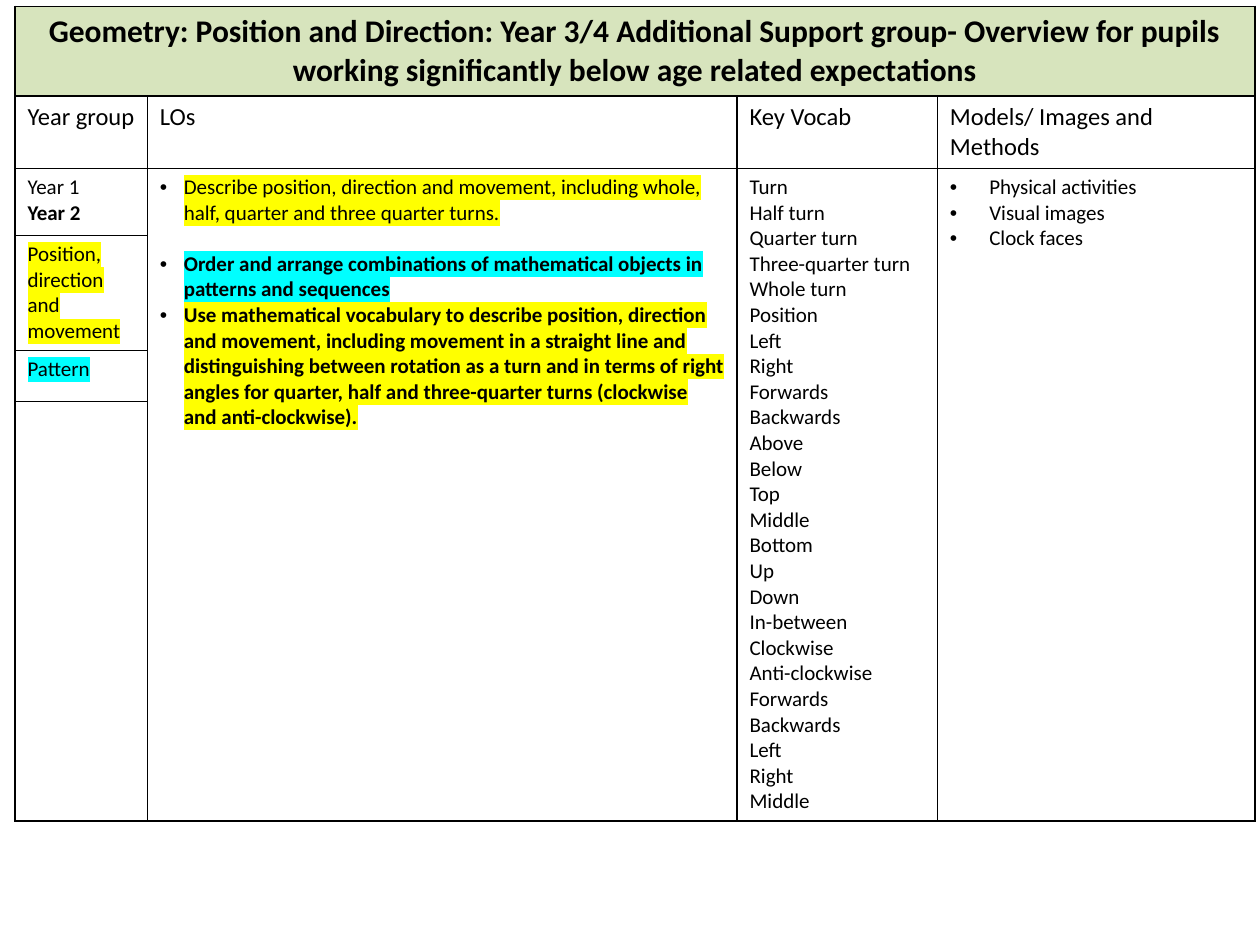
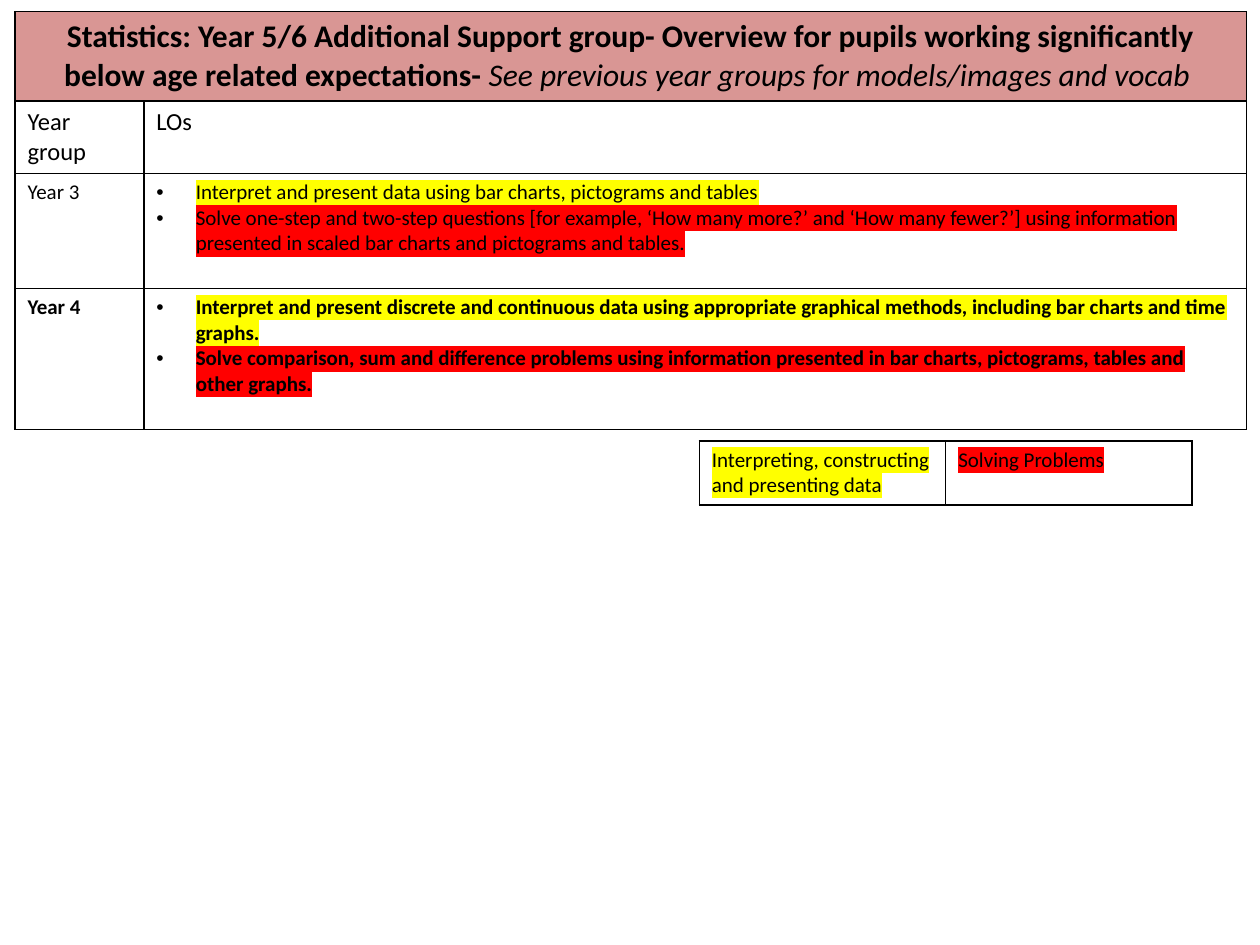
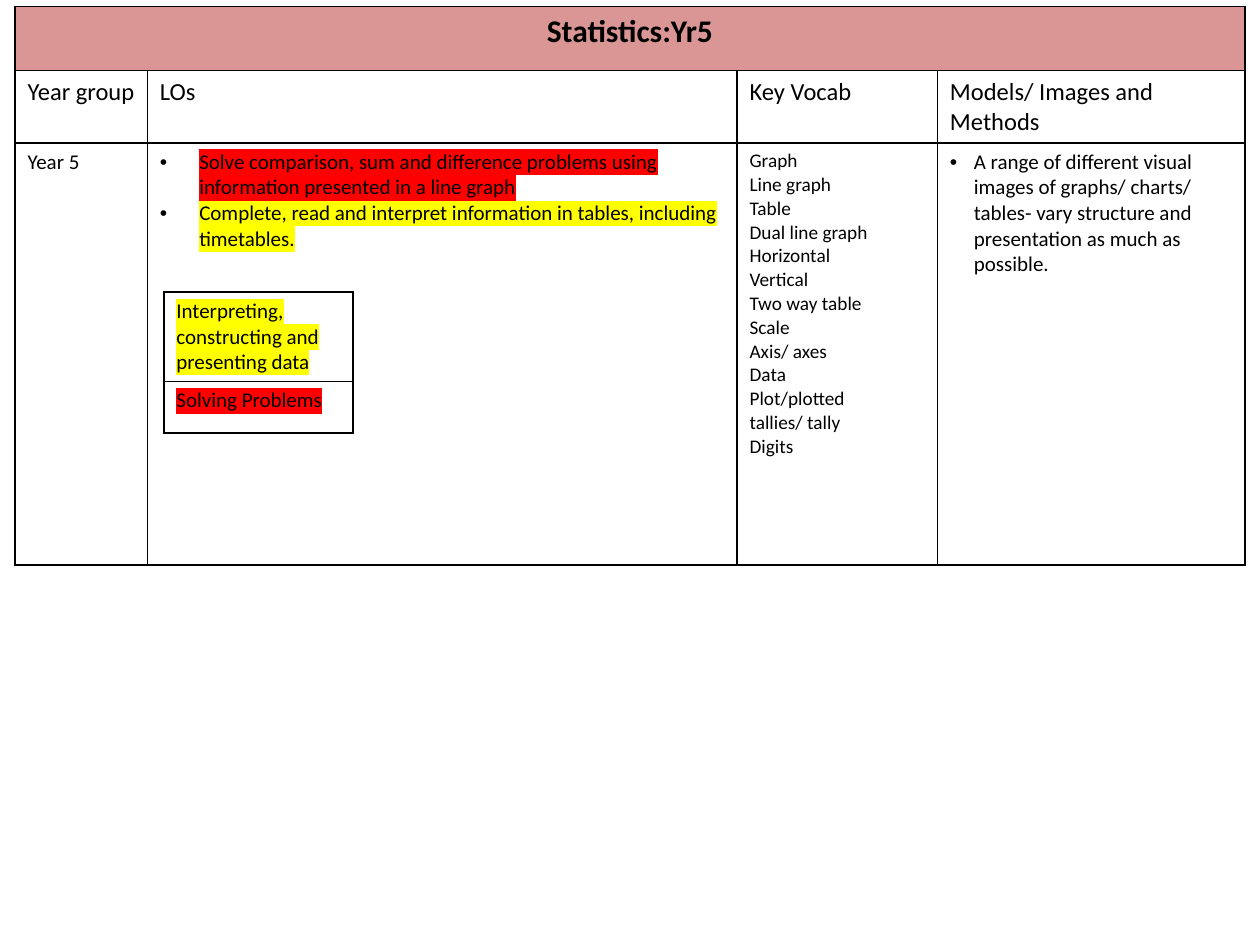
"""Builds three maths overview slides made of bordered curriculum tables."""
from dataclasses import dataclass

from lxml import etree
from pptx import Presentation
from pptx.dml.color import RGBColor
from pptx.enum import text as t
from pptx.oxml import ns
from pptx.util import Pt

FONT = "Calibri"
BLACK, YELLOW, CYAN, RED = "000000", "FFFF00", "00FFFF", "FF0000"
GEOMETRY, STATISTICS = "D7E4BD", "D99694"
LEFT, TOP = 8.6, 3.6
HEADING_HEIGHT = 41.4
NARROW, WIDE = 13.7, 22.5


@dataclass
class Run:
    """A stretch of text with one format."""
    text: str
    bold: bool = False
    italic: bool = False
    mark: str = ""


@dataclass
class Line:
    """A paragraph; a positive indent gives it a bullet."""
    runs: list[Run]
    size: float = 12
    indent: float = 0
    before: float = 0
    centred: bool = False


@dataclass
class Cell:
    """The paragraphs of one table cell and its fill."""
    lines: list[Line]
    fill: str = ""


@dataclass
class Grid:
    """A table; a row with a single cell spans every column."""
    left: float
    top: float
    widths: list[float]
    heights: list[float]
    rows: list[list[Cell]]


def colour(value: str) -> RGBColor:
    """Turn a hex string into a colour."""
    return RGBColor.from_string(value)


def add_child(parent, tag: str, **attributes: str):
    """Append a DrawingML element."""
    return etree.SubElement(parent, ns.qn(f"a:{tag}"), attributes)


def write(paragraph, text: str, *, size: float, bold: bool = False,
          italic: bool = False, mark: str = "") -> None:
    """Add a formatted run, highlighted when a mark colour is given."""
    run = paragraph.add_run()
    run.text = text
    font = run.font
    font.name, font.size, font.bold, font.italic = FONT, Pt(size), bold, italic
    font.color.rgb = colour(BLACK)
    if mark:
        properties = run._r.get_or_add_rPr()
        highlight = add_child(properties, "highlight")
        add_child(highlight, "srgbClr", val=mark)
        properties.find(ns.qn("a:latin")).addprevious(highlight)


def draw_line(paragraph, line: Line) -> None:
    """Write one paragraph with its bullet, spacing and alignment."""
    if line.indent:
        properties = paragraph._p.get_or_add_pPr()
        properties.set("marL", str(Pt(line.indent)))
        properties.set("indent", str(-Pt(line.indent)))
        add_child(properties, "buFont", typeface="Arial")
        add_child(properties, "buChar", char="•")
    if line.before:
        paragraph.space_before = Pt(line.before)
    paragraph.alignment = t.PP_ALIGN.CENTER if line.centred else t.PP_ALIGN.LEFT
    for run in line.runs:
        write(paragraph, run.text, size=line.size, bold=run.bold,
              italic=run.italic, mark=run.mark)


def draw_borders(cell) -> None:
    """Rule all four sides of a cell."""
    properties = cell._tc.get_or_add_tcPr()
    for side in "LRTB":
        rule = add_child(properties, f"ln{side}", w=str(Pt(1)))
        add_child(add_child(rule, "solidFill"), "srgbClr", val=BLACK)


def draw_cell(cell, content: Cell) -> None:
    """Write a cell's paragraphs and set its fill."""
    if content.fill:
        cell.fill.solid()
        cell.fill.fore_color.rgb = colour(content.fill)
    for index, line in enumerate(content.lines):
        frame = cell.text_frame
        draw_line(frame.add_paragraph() if index else frame.paragraphs[0], line)


def draw_grid(slide, grid: Grid) -> None:
    """Draw a table with its rules and contents."""
    table = slide.shapes.add_table(
        len(grid.heights), len(grid.widths), Pt(grid.left), Pt(grid.top),
        Pt(sum(grid.widths)), Pt(sum(grid.heights))).table
    table.first_row = table.horz_banding = False
    for column, width in zip(table.columns, grid.widths):
        column.width = Pt(width)
    for row, height in zip(table.rows, grid.heights):
        row.height = Pt(height)
    for cell in table.iter_cells():
        draw_borders(cell)
        cell.fill.background()
    for index, contents in enumerate(grid.rows):
        if len(contents) < len(grid.widths):
            table.cell(index, 0).merge(table.cell(index, len(grid.widths) - 1))
        for column, content in enumerate(contents):
            draw_cell(table.cell(index, column), content)


def title(fill: str, *runs: Run) -> list[Cell]:
    """Make the coloured title row."""
    return [Cell([Line(list(runs), size=18, centred=True)], fill)]


def headings(*names: str) -> list[Cell]:
    """Make the row of column headings."""
    return [Cell([Line([Run(name)], size=14)]) for name in names]


def plain(*words: str, size: float = 12, indent: float = 0) -> Cell:
    """Make a cell with one unmarked paragraph per string."""
    return Cell([Line([Run(word)], size, indent) for word in words])


def objective(text: str, mark: str, *, bold: bool = False,
              indent: float = WIDE, before: float = 0) -> Line:
    """Make a highlighted bullet."""
    return Line([Run(text, bold, mark=mark)], indent=indent, before=before)


def key(text: str, mark: str) -> Cell:
    """Make a cell of the colour key."""
    return Cell([Line([Run(text, mark=mark)])])


COLUMNS = ("Year group", "LOs", "Key Vocab", "Models/ Images and Methods")
WIDTHS = [75.6, 337, 114.5]
DATA_KEY = key("Interpreting, constructing and presenting data", YELLOW)
PROBLEMS_KEY = key("Solving Problems", RED)

GEOMETRY_OVERVIEW = Grid(LEFT, TOP, WIDTHS + [181.4], [51.1, HEADING_HEIGHT, 373], [
    title(GEOMETRY, Run("Geometry: Position and Direction: Year 3/4 Additional Support group- "
                        "Overview for pupils working significantly below age related "
                        "expectations", bold=True)),
    headings(*COLUMNS),
    [
        Cell([Line([Run("Year 1")]), Line([Run("Year 2", bold=True)])]),
        Cell([
            objective("Describe position, direction and movement, including whole, half, "
                      "quarter and three quarter turns.", YELLOW, indent=NARROW),
            objective("Order and arrange combinations of mathematical objects in patterns "
                      "and sequences", CYAN, bold=True, indent=NARROW, before=14.6),
            objective("Use mathematical vocabulary to describe position, direction and "
                      "movement, including movement in a straight line and distinguishing "
                      "between rotation as a turn and in terms of right angles for quarter, "
                      "half and three-quarter turns (clockwise and anti-clockwise).",
                      YELLOW, bold=True, indent=NARROW),
        ]),
        plain("Turn", "Half turn", "Quarter turn", "Three-quarter turn", "Whole turn",
              "Position", "Left", "Right", "Forwards", "Backwards", "Above", "Below", "Top",
              "Middle", "Bottom", "Up", "Down", "In-between", "Clockwise", "Anti-clockwise",
              "Forwards", "Backwards", "Left", "Right", "Middle"),
        plain("Physical activities", "Visual images", "Clock faces", indent=WIDE),
    ],
])
GEOMETRY_KEY = Grid(LEFT, 134.6, [75.6], [65.7, 29.2], [
    [key("Position, direction and movement", YELLOW)],
    [key("Pattern", CYAN)],
])

SUPPORT_OVERVIEW = Grid(LEFT, 6.6, [73.6, 630.2], [51.1, HEADING_HEIGHT, 65.7, 80.5], [
    title(STATISTICS,
          Run("Statistics: Year 5/6 Additional Support group- Overview for pupils working "
              "significantly below age related expectations- ", bold=True),
          Run("See previous year groups for models/images and vocab ", italic=True)),
    headings(*COLUMNS[:2]),
    [
        plain("Year 3"),
        Cell([
            objective("Interpret and present data using bar charts, pictograms and tables",
                      YELLOW),
            objective("Solve one-step and two-step questions [for example, ‘How many more?’ "
                      "and ‘How many fewer?’] using information presented in scaled bar "
                      "charts and pictograms and tables.", RED),
        ]),
    ],
    [
        Cell([Line([Run("Year 4", bold=True)])]),
        Cell([
            objective("Interpret and present discrete and continuous data using appropriate "
                      "graphical methods, including bar charts and time graphs.",
                      YELLOW, bold=True),
            objective("Solve comparison, sum and difference problems using information "
                      "presented in bar charts, pictograms, tables and other graphs.",
                      RED, bold=True),
        ]),
    ],
])
SUPPORT_KEY = Grid(399.6, 252, [140.8] * 2, [36.5], [[DATA_KEY, PROBLEMS_KEY]])

YEAR_5_OVERVIEW = Grid(LEFT, TOP, WIDTHS + [175.7], [36.8, HEADING_HEIGHT, 241], [
    title(STATISTICS, Run("Statistics:Yr5", bold=True)),
    headings(*COLUMNS),
    [
        plain("Year 5"),
        Cell([
            objective("Solve comparison, sum and difference problems using information "
                      "presented in a line graph", RED),
            objective("Complete, read and interpret information in tables, including "
                      "timetables.", YELLOW),
        ]),
        plain("Graph", "Line graph", "Table", "Dual line graph", "Horizontal", "Vertical",
              "Two way table", "Scale", "Axis/ axes", "Data", "Plot/plotted",
              "tallies/ tally", "Digits", size=11),
        plain("A range of different visual images of graphs/ charts/ tables- vary structure "
              "and presentation as much as possible.", indent=NARROW),
    ],
])
YEAR_5_KEY = Grid(93.6, 167, [108], [51.1, 29.2], [[DATA_KEY], [PROBLEMS_KEY]])

SLIDES = [
    (GEOMETRY_OVERVIEW, GEOMETRY_KEY),
    (SUPPORT_OVERVIEW, SUPPORT_KEY),
    (YEAR_5_OVERVIEW, YEAR_5_KEY),
]


def main() -> None:
    """Build and save the presentation."""
    presentation = Presentation()
    presentation.slide_width, presentation.slide_height = Pt(720), Pt(540)
    for grids in SLIDES:
        slide = presentation.slides.add_slide(presentation.slide_layouts[6])
        for grid in grids:
            draw_grid(slide, grid)
    presentation.save("out.pptx")


if __name__ == "__main__":
    main()
